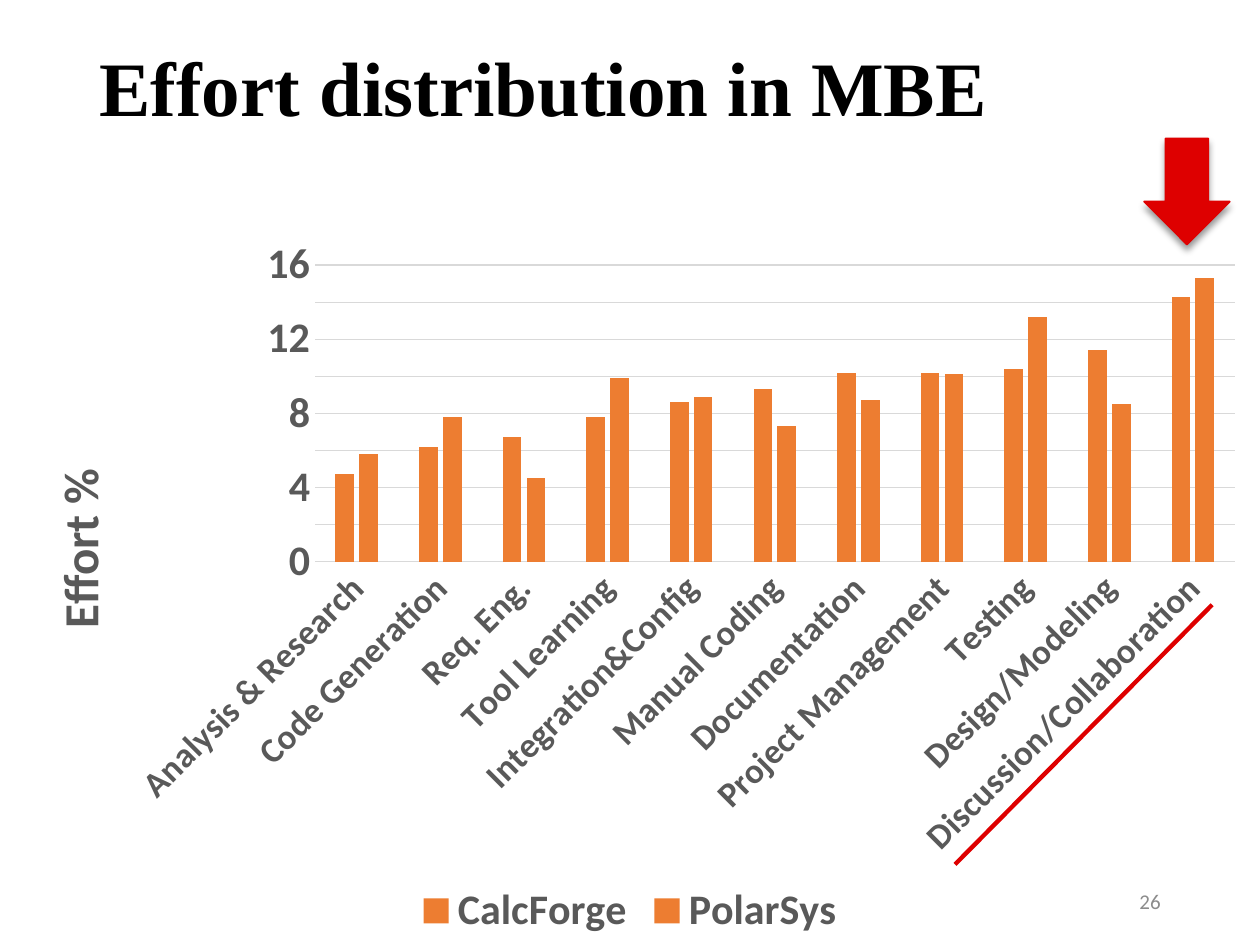
import pptx
import pptx.chart.data
import pptx.dml.color
import pptx.enum.chart
import pptx.enum.shapes
import pptx.enum.text
import pptx.oxml
import pptx.oxml.ns
import pptx.util
from pptx.util import Inches

RED, GREY, GRID, ORANGE = "DE0000", "595959", "D9D9D9", "ED7D31"

EFFORT = [
    ("Analysis & Research", 4.7, 5.8),
    ("Code Generation", 6.2, 7.8),
    ("Req. Eng.", 6.7, 4.5),
    ("Tool Learning", 7.8, 9.9),
    ("Integration&Config", 8.6, 8.9),
    ("Manual Coding", 9.3, 7.3),
    ("Documentation", 10.2, 8.7),
    ("Project Management", 10.2, 10.1),
    ("Testing", 10.4, 13.2),
    ("Design/Modeling", 11.4, 8.5),
    ("Discussion/Collaboration", 14.3, 15.3),
]


def color(value):
    return pptx.dml.color.RGBColor.from_string(value)


def format_font(font, size, fill, bold=False, name="Calibri"):
    font.size, font.bold, font.name = pptx.util.Pt(size), bold, name
    font.color.rgb = color(fill)


def write(frame, text, align=None, spacing=None, **font_format):
    paragraph = frame.paragraphs[0]
    paragraph.alignment = align
    paragraph.line_spacing = spacing
    run = paragraph.add_run()
    run.text = text
    format_font(run.font, **font_format)


def parse_xml(tag, inner=""):
    return pptx.oxml.parse_xml(f'<{tag} {pptx.oxml.ns.nsdecls("a", "c")}>{inner}</{tag.split()[0]}>')


def manual_layout(**values):
    """Place a chart part by fractions of the chart area."""
    target = '<c:layoutTarget val="inner"/>' if "w" in values else ""
    modes = '<c:xMode val="edge"/><c:yMode val="edge"/>'
    places = "".join(f'<c:{key} val="{value}"/>' for key, value in values.items())
    return parse_xml("c:layout", f"<c:manualLayout>{target}{modes}{places}</c:manualLayout>")


def replace_layout(parent, layout, position):
    for old in parent.findall(pptx.oxml.ns.qn("c:layout")):
        parent.remove(old)
    parent.insert(position, layout)


class SlideBuilder:
    def __init__(self, slide):
        self.slide = slide

    def text(self, text, left, top, width, height, **text_format):
        box = self.slide.shapes.add_textbox(Inches(left), Inches(top), Inches(width), Inches(height))
        box.text_frame.word_wrap = True
        box.text_frame.vertical_anchor = pptx.enum.text.MSO_ANCHOR.MIDDLE
        write(box.text_frame, text, **text_format)

    def arrow(self, left, top, width, height, fill):
        shape = self.slide.shapes.add_shape(
            pptx.enum.shapes.MSO_SHAPE.DOWN_ARROW,
            Inches(left), Inches(top), Inches(width), Inches(height))
        shape.fill.solid()
        shape.fill.fore_color.rgb = color(fill)
        shape.line.color.rgb = color(fill)
        shape.line.width = pptx.util.Pt(1)
        shape.shadow.inherit = False
        effects = shape._element.spPr.find(pptx.oxml.ns.qn("a:effectLst"))
        effects.append(parse_xml(
            'a:outerShdw blurRad="50800" dist="38100" dir="5400000" rotWithShape="0"'.replace("\n", ""),
            '<a:srgbClr val="000000"><a:alpha val="40000"/></a:srgbClr>'))

    def line(self, start, end, fill, width):
        connector = self.slide.shapes.add_connector(
            pptx.enum.shapes.MSO_CONNECTOR.STRAIGHT,
            *(Inches(length) for length in (*start, *end)))
        connector.line.color.rgb = color(fill)
        connector.line.width = pptx.util.Pt(width)
        connector._element.spPr.append(parse_xml("a:effectLst"))

    def column_chart(self, rows, names, left, top, width, height):
        data = pptx.chart.data.CategoryChartData()
        categories, *columns = zip(*rows)
        data.categories = categories
        for name, values in zip(names, columns):
            data.add_series(name, values)
        chart = self.slide.shapes.add_chart(
            pptx.enum.chart.XL_CHART_TYPE.COLUMN_CLUSTERED,
            Inches(left), Inches(top), Inches(width), Inches(height), data).chart
        format_font(chart.font, 10, "000000")
        chart.has_title = False

        # Columns
        plot = chart.plots[0]
        plot.gap_width, plot.overlap, plot.vary_by_categories = 219, -27, False
        for series in plot.series:
            series.format.fill.solid()
            series.format.fill.fore_color.rgb = color(ORANGE)
        replace_layout(chart._chartSpace.chart.plotArea,
                       manual_layout(x=0.25, y=0.06, w=0.73, h=0.41), 0)

        # Axes
        category_axis, value_axis = chart.category_axis, chart.value_axis
        for axis, size in ((category_axis, 20), (value_axis, 24)):
            axis.major_tick_mark = pptx.enum.chart.XL_TICK_MARK.NONE
            axis.minor_tick_mark = pptx.enum.chart.XL_TICK_MARK.NONE
            format_font(axis.tick_labels.font, size, GREY, bold=True)
        category_axis._element.txPr.bodyPr.set("rot", "-2700000")
        value_axis.minimum_scale, value_axis.maximum_scale, value_axis.major_unit = 0, 16, 2
        value_axis.format.line.fill.background()
        for line in (category_axis.format.line, value_axis.major_gridlines.format.line):
            line.color.rgb = color(GRID)
            line.width = pptx.util.Pt(0.75)

        # Axis title
        title = value_axis.axis_title
        write(title.text_frame, "Effort %", size=28, fill=GREY, bold=True)
        title.text_frame._txBody.bodyPr.set("rot", "-5400000")
        replace_layout(title._element, manual_layout(x=0.03, y=0.33), 1)

        # Legend
        chart.has_legend = True
        chart.legend.position = pptx.enum.chart.XL_LEGEND_POSITION.BOTTOM
        chart.legend.include_in_layout = False
        format_font(chart.legend.font, 24, GREY, bold=True)


def main():
    presentation = pptx.Presentation()
    presentation.slide_width, presentation.slide_height = Inches(10), Inches(7.5)
    builder = SlideBuilder(presentation.slides.add_slide(presentation.slide_layouts[6]))

    # Slide number
    builder.text("26", 7.06, 6.95, 2.25, 0.4, size=12, fill="8C8C8C",
                 align=pptx.enum.text.PP_ALIGN.RIGHT)

    # Effort chart
    builder.column_chart(EFFORT, ("CalcForge", "PolarSys"), 0, 1.76, 10, 5.74)

    # Title
    builder.text("Effort distribution in MBE", 0.69, 0, 8.62, 1.45, size=44,
                 fill="000000", bold=True, name="Times New Roman", spacing=0.9)

    # Highlight of the largest effort
    builder.arrow(9.08, 1.1, 0.68, 0.84, RED)
    builder.line((7.58, 6.86), (9.62, 4.8), RED, 2.5)

    presentation.save("out.pptx")


if __name__ == "__main__":
    main()
